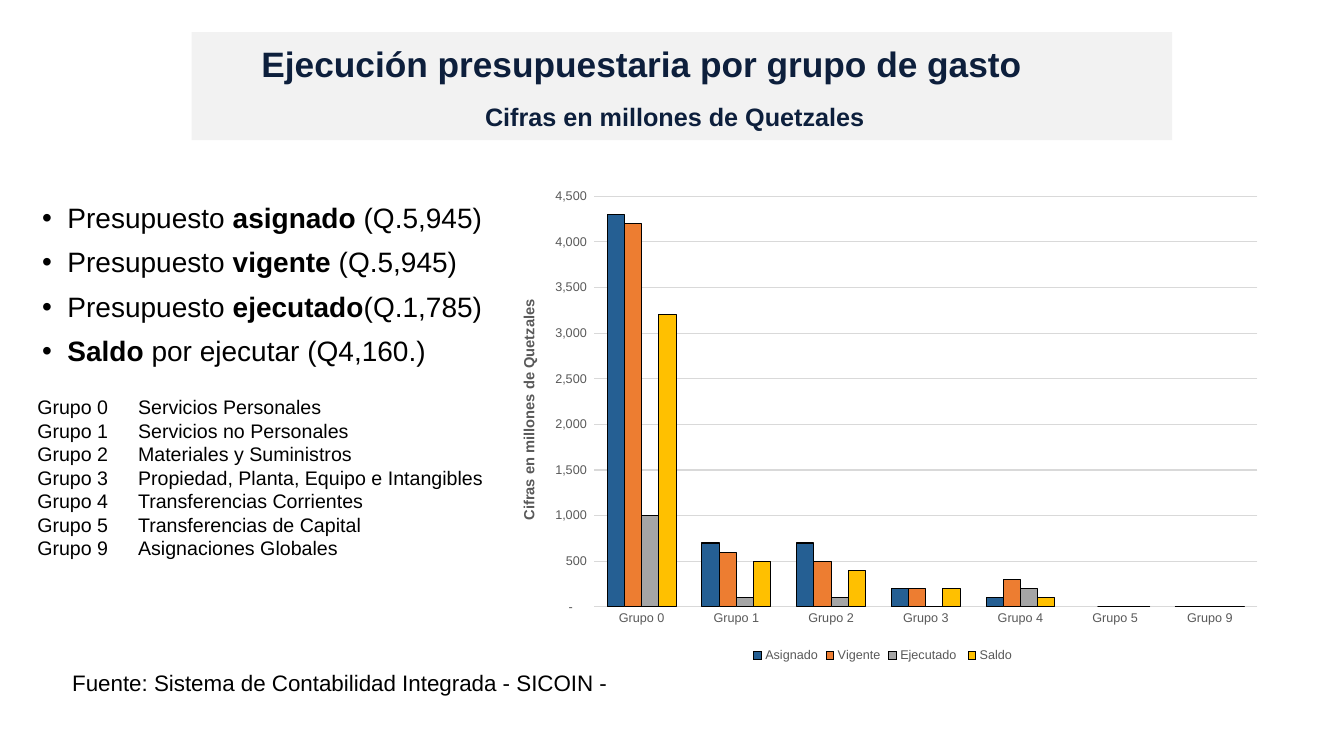
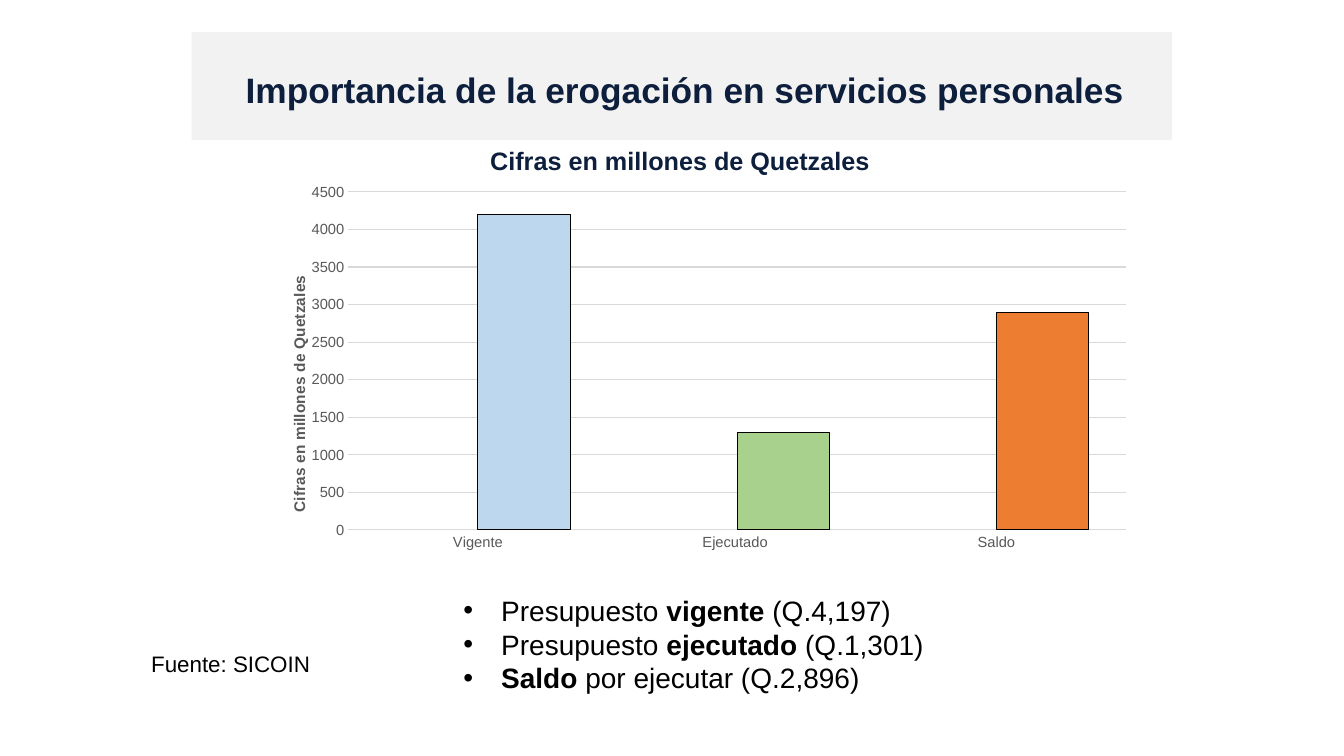
import pptx
import pptx.chart.data
import pptx.dml.color
import pptx.enum.chart
import pptx.enum.shapes
import pptx.enum.text
import pptx.oxml
import pptx.oxml.ns
import pptx.util
from pptx.util import Cm

FONT = "Arial"
BLACK, NAVY, GREY = "000000", "0D1F3C", "595959"
BAND_FILL, GRID = "F2F2F2", "D9D9D9"
BLUE, ORANGE, SILVER, GOLD = "255F93", "ED7D31", "A5A5A5", "FFC000"
SKY, GREEN, INDIGO = "BDD7EE", "A9D18E", "4472C4"
UNITS = "Cifras en millones de Quetzales"
BAND = (4.83, 0.81, 24.71, 2.72)
ACCOUNTING = '_-* #,##0_-;\\-* #,##0_-;_-* "-"??_-;_-@_'
ALIGN = pptx.enum.text.PP_ALIGN
ANCHOR = pptx.enum.text.MSO_ANCHOR


def color(hex_text):
    return pptx.dml.color.RGBColor.from_string(hex_text)


def make(tag, parent, **attributes):
    """Append a new XML element to its parent."""
    element = pptx.oxml.parse_xml(f"<{tag} {pptx.oxml.ns.nsdecls(tag.split(':')[0])}/>")
    for name, value in attributes.items():
        element.set(name, str(value))
    parent.append(element)
    return element


def style_font(font, size, hex_text, bold=False):
    font.name, font.size, font.bold = FONT, pptx.util.Pt(size), bold
    font.color.rgb = color(hex_text)


def add_text(page, box, text, size=16, hex_text=BLACK, bold=False, align=None,
             anchor=ANCHOR.TOP, line_spacing=None, gap=0, margin=0, hanging=0,
             bullet=False):
    """One paragraph a line; words between asterisks are bold."""
    frame = page.shapes.add_textbox(*map(Cm, box)).text_frame
    frame.word_wrap = True
    frame.vertical_anchor = anchor
    for number, line in enumerate(text.split("\n")):
        para = frame.paragraphs[0] if number == 0 else frame.add_paragraph()
        properties = para._p.get_or_add_pPr()
        properties.set("marL", str(Cm(margin)))
        properties.set("indent", str(-Cm(hanging)))
        if bullet:
            make("a:srgbClr", make("a:buClr", properties), val=BLACK)
            make("a:buFont", properties, typeface=FONT)
            make("a:buChar", properties, char="•")
        para.alignment = align
        para.line_spacing = line_spacing
        if number and gap:
            para.space_before = pptx.util.Pt(gap)
        for part, words in enumerate(line.split("*")):
            if words:
                span = para.add_run()
                span.text = words
                style_font(span.font, size, hex_text, bold or part % 2 == 1)


def add_heading(page, box, text, size):
    add_text(page, box, text, size=size, hex_text=NAVY, bold=True,
             align=ALIGN.CENTER, anchor=ANCHOR.MIDDLE, line_spacing=0.9)


def add_source(page, box, text):
    add_text(page, box, text, margin=1.27)


def add_page(deck, title, title_box, subtitle_box):
    """Blank page with the grey band, title and subtitle."""
    page = deck.slides.add_slide(deck.slide_layouts[6])
    band = page.shapes.add_shape(
        pptx.enum.shapes.MSO_SHAPE.RECTANGLE, *map(Cm, BAND))
    band.shadow.inherit = False
    band.fill.solid()
    band.fill.fore_color.rgb = color(BAND_FILL)
    band.line.fill.background()
    add_heading(page, title_box, title, 25.2)
    add_heading(page, subtitle_box, UNITS, 18)
    return page


def place(parent, index, inner=False, **fractions):
    """Give a chart part a fixed place, as fractions of the chart."""
    for old in parent.findall(pptx.oxml.ns.qn("c:layout")):
        parent.remove(old)
    layout = make("c:layout", parent)
    manual = make("c:manualLayout", layout)
    if inner:
        make("c:layoutTarget", manual, val="inner")
    for name in ("x", "y"):
        make(f"c:{name}Mode", manual, val="edge")
    for name, value in fractions.items():
        make(f"c:{name}", manual, val=value)
    parent.insert(index, layout)


def paint(item, hex_text):
    item.format.fill.solid()
    item.format.fill.fore_color.rgb = color(hex_text)
    item.format.line.color.rgb = color(BLACK)
    item.format.line.width = pptx.util.Pt(0.75)


def add_columns(page, box, categories, series, plot_area, title_place, gap,
                size, title_size, number_format="General", legend=False):
    """Column chart; series holds (name, colour, values)."""
    data = pptx.chart.data.CategoryChartData()
    data.categories = categories
    for name, _, values in series:
        data.add_series(name, values)
    chart = page.shapes.add_chart(
        pptx.enum.chart.XL_CHART_TYPE.COLUMN_CLUSTERED,
        *map(Cm, box), data).chart
    style_font(chart.font, 10, BLACK)
    chart.has_title = False

    # Columns
    plot = chart.plots[0]
    plot.gap_width, plot.overlap, plot.vary_by_categories = gap, 0, False
    for column, (_, hex_text, _) in zip(plot.series, series):
        column.invert_if_negative = False
        paint(column, hex_text)

    # Axes
    for axis in (chart.category_axis, chart.value_axis):
        axis.major_tick_mark = pptx.enum.chart.XL_TICK_MARK.NONE
        axis.minor_tick_mark = pptx.enum.chart.XL_TICK_MARK.NONE
        axis.format.line.fill.background()
        style_font(axis.tick_labels.font, size, GREY)
    axis = chart.value_axis
    axis.minimum_scale, axis.maximum_scale, axis.major_unit = 0, 4500, 500
    axis.tick_labels.number_format = number_format
    axis.tick_labels.number_format_is_linked = False
    axis.major_gridlines.format.line.color.rgb = color(GRID)
    axis.major_gridlines.format.line.width = pptx.util.Pt(0.75)

    # Axis title, read upwards
    span = axis.axis_title.text_frame.paragraphs[0].add_run()
    span.text = UNITS
    style_font(span.font, title_size, GREY, True)
    title = axis.axis_title._element
    body = title.find(".//" + pptx.oxml.ns.qn("a:bodyPr"))
    body.set("rot", "-5400000")
    body.set("vert", "horz")
    place(title, 1, **title_place)

    # Plot area and legend
    place(chart._chartSpace.chart.plotArea, 0, inner=True, **plot_area)
    chart.has_legend = legend
    if legend:
        chart.legend.position = pptx.enum.chart.XL_LEGEND_POSITION.BOTTOM
        chart.legend.include_in_layout = False
        style_font(chart.legend.font, size, GREY)
    return chart


def build_spending_groups(deck):
    page = add_page(deck, "Ejecución presupuestaria por grupo de gasto ",
                    (3.61, 1.3, 25.37, 0.71), (4.32, 2.64, 25.37, 0.71))
    add_text(page, (0.81, 5.03, 14.5, 4.98),
             "Presupuesto *asignado* (Q.5,945)\n"
             "Presupuesto *vigente* (Q.5,945)\n"
             "Presupuesto *ejecutado*(Q.1,785)\n"
             "*Saldo* por ejecutar (Q4,160.)",
             size=20, line_spacing=0.9, gap=10, margin=0.64, hanging=0.64,
             bullet=True)
    names = {0: "Servicios Personales", 1: "Servicios no Personales",
             2: "Materiales y Suministros",
             3: "Propiedad, Planta, Equipo e Intangibles",
             4: "Transferencias Corrientes", 5: "Transferencias de Capital",
             9: "Asignaciones Globales"}
    add_columns(
        page, (12.42, 4.19, 19.66, 12.62), [f"Grupo {key}" for key in names],
        [("Asignado", BLUE, (4300, 700, 700, 200, 100, None, 0)),
         ("Vigente", ORANGE, (4200, 600, 500, 200, 300, 0, 0)),
         ("Ejecutado ", SILVER, (1000, 100, 100, 0, 200, 0, 0)),
         ("Saldo", GOLD, (3200, 500, 400, 200, 100, 0, 0))],
        plot_area={"x": 0.13, "y": 0.06, "w": 0.85, "h": 0.82},
        title_place={"x": 0.03, "y": 0.26}, gap=150, size=9, title_size=10.5,
        number_format=ACCOUNTING, legend=True)
    add_text(page, (0.69, 9.83, 12.6, 5.21),
             "\n".join(f"Grupo {key}\t{name}" for key, name in names.items()),
             size=14)
    add_source(page, (0.3, 16.74, 18.95, 0.94),
               "Fuente: Sistema de Contabilidad Integrada - SICOIN -")


def build_personal_services(deck):
    page = add_page(deck, "Importancia de la erogación en servicios personales",
                    (5.08, 1.55, 24.36, 1.52), (4.45, 3.73, 25.37, 0.71))
    add_text(page, (10.16, 14.83, 18.67, 2.82),
             "Presupuesto *vigente* (Q.4,197)\n"
             "Presupuesto *ejecutado* (Q.1,301)\n"
             "*Saldo* por ejecutar (Q.2,896)",
             size=20, margin=2.22, hanging=0.95, bullet=True)
    chart = add_columns(
        page, (6.3, 4.45, 22.53, 9.68), ["Vigente", "Ejecutado ", "Saldo"],
        [("Series 1", INDIGO, (None, None, None)),
         ("Series 2", ORANGE, (4200, 1300, 2900))],
        plot_area={"x": 0.11, "y": 0.04, "w": 0.87, "h": 0.88},
        title_place={"x": 0.04, "y": 0.25}, gap=80, size=10.5, title_size=11)
    for index, hex_text in enumerate((SKY, GREEN)):
        paint(chart.plots[0].series[1].points[index], hex_text)
    add_source(page, (2.29, 16.26, 6.99, 0.94), "Fuente: SICOIN")


def main():
    deck = pptx.Presentation()
    deck.slide_width, deck.slide_height = Cm(33.87), Cm(19.05)
    build_spending_groups(deck)
    build_personal_services(deck)
    deck.save("out.pptx")


if __name__ == "__main__":
    main()
